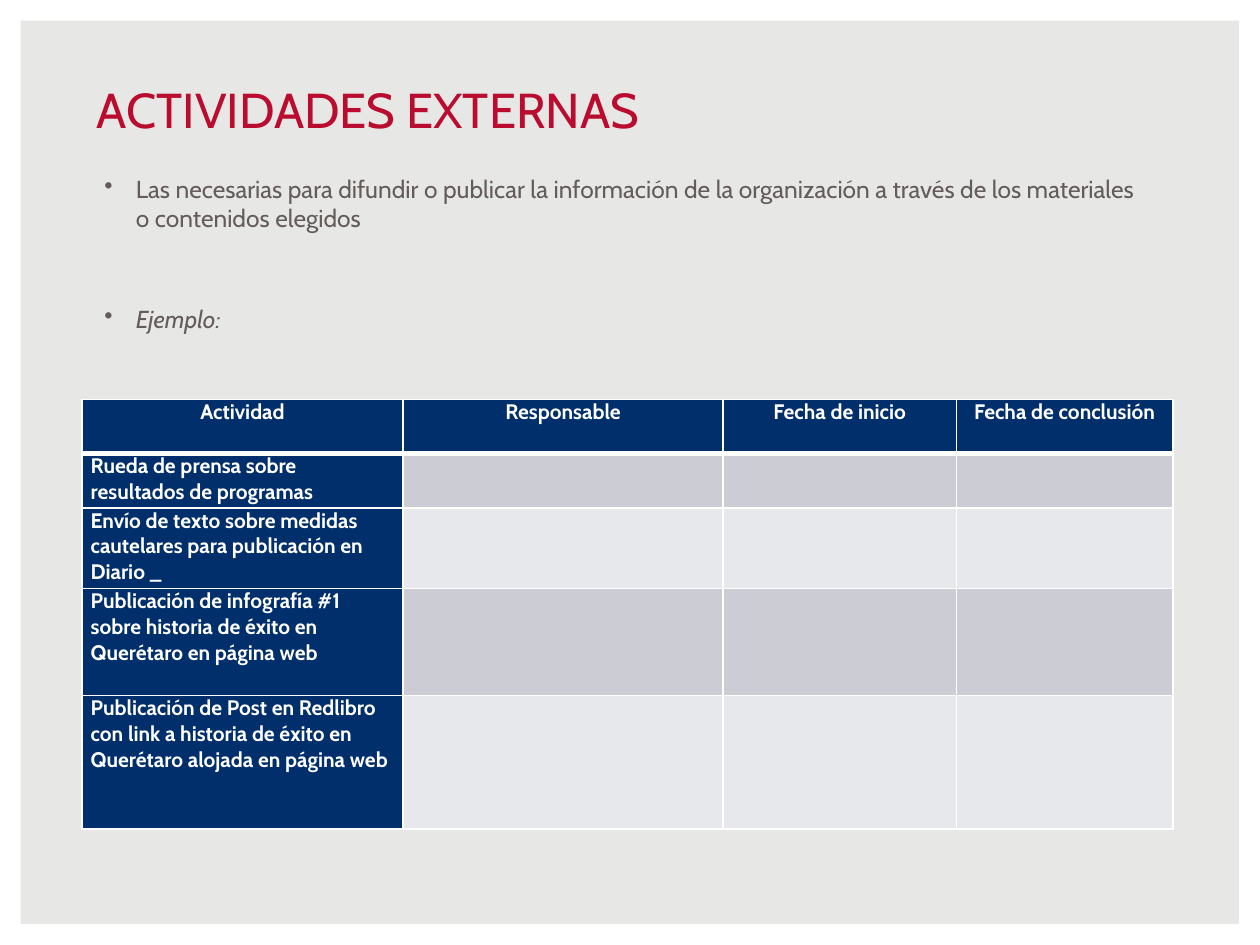
import pptx
import pptx.dml.color
import pptx.enum.shapes
import pptx.enum.text
import pptx.oxml
import pptx.oxml.ns
import pptx.util

RGBColor = pptx.dml.color.RGBColor
Inches = pptx.util.Inches
Pt = pptx.util.Pt

PAPER = RGBColor(0xE7, 0xE7, 0xE5)
WHITE = RGBColor(0xFF, 0xFF, 0xFF)
RED = RGBColor(0xBA, 0x0C, 0x2F)
GREY = RGBColor(0x63, 0x5C, 0x5B)
NAVY = RGBColor(0x00, 0x2F, 0x6C)
BANDS = (RGBColor(0xCC, 0xCD, 0xD4), RGBColor(0xE7, 0xE8, 0xEB))

FONT = "Cabin"
WIDTH, HEIGHT = 10, 7.5
COLUMNS = (2.55, 2.54, 1.85, 1.72)
ROWS = (0.43, 0.43, 0.64, 0.85, 1.06)
HEADINGS = ("Actividad", "Responsable", "Fecha de inicio", "Fecha de conclusión")
ACTIVITIES = (
    "Rueda de prensa sobre resultados de programas",
    "Envío de texto sobre medidas cautelares para publicación en Diario _",
    "Publicación de infografía #1 sobre historia de éxito en Querétaro en página web",
    "Publicación de Post en Redlibro con link a historia de éxito en Querétaro "
    "alojada en página web",
)


def add_span(para, text, size, color, bold=False, italic=False):
    span = para.add_run()
    span.text = text
    font = span.font
    font.name, font.size, font.bold, font.italic = FONT, Pt(size), bold, italic
    font.color.rgb = color


def add_frame(page):
    frame = page.shapes.add_shape(
        pptx.enum.shapes.MSO_SHAPE.FRAME, 0, 0, Inches(WIDTH), Inches(HEIGHT))
    frame.adjustments[0] = 0.022
    frame.shadow.inherit = False
    frame.fill.solid()
    frame.fill.fore_color.rgb = WHITE
    frame.line.fill.background()


def add_text_box(page, left, top, width, height, anchor):
    box = page.shapes.add_textbox(*map(Inches, (left, top, width, height)))
    box.text_frame.word_wrap = True
    box.text_frame.vertical_anchor = anchor
    return box.text_frame


def set_bullet(para):
    properties = para._p.get_or_add_pPr()
    properties.set("marL", str(Inches(0.25)))
    properties.set("indent", str(-Inches(0.25)))
    bullet = pptx.oxml.parse_xml(
        f'<a:buChar {pptx.oxml.ns.nsdecls("a")} char="•"/>')
    properties.append(bullet)


def set_borders(cell, top, bottom):
    properties = cell._tc.get_or_add_tcPr()
    for side, points in (("L", 1), ("R", 1), ("T", top), ("B", bottom)):
        properties.append(pptx.oxml.parse_xml(
            f'<a:ln{side} {pptx.oxml.ns.nsdecls("a")} w="{Pt(points)}">'
            f'<a:solidFill><a:srgbClr val="{WHITE}"/></a:solidFill></a:ln{side}>'))


def fill_label(cell, text, align):
    cell.margin_left = cell.margin_right = Inches(0.07)
    cell.margin_top = cell.margin_bottom = 0
    para = cell.text_frame.paragraphs[0]
    para.alignment = align
    add_span(para, text, 12, WHITE, bold=True)


def add_schedule(page):
    holder = page.shapes.add_table(
        len(ROWS), len(COLUMNS), Inches(0.65), Inches(3.17),
        Inches(sum(COLUMNS)), Inches(sum(ROWS)))
    table = holder.table
    for column, width in zip(table.columns, COLUMNS):
        column.width = Inches(width)
    for row, height in zip(table.rows, ROWS):
        row.height = Inches(height)

    align = pptx.enum.text.PP_ALIGN
    for r in range(len(ROWS)):
        for c in range(len(COLUMNS)):
            cell = table.cell(r, c)
            # A thick rule parts the header from the activities
            set_borders(cell, top=3 if r == 1 else 1, bottom=3 if r == 0 else 1)
            cell.fill.solid()
            is_label = r == 0 or c == 0
            cell.fill.fore_color.rgb = NAVY if is_label else BANDS[(r - 1) % 2]
            if r == 0:
                fill_label(cell, HEADINGS[c], align.CENTER)
            elif c == 0:
                fill_label(cell, ACTIVITIES[r - 1], align.LEFT)


def main():
    deck = pptx.Presentation()
    deck.slide_width, deck.slide_height = Inches(WIDTH), Inches(HEIGHT)
    page = deck.slides.add_slide(deck.slide_layouts[6])
    anchor = pptx.enum.text.MSO_ANCHOR

    # Background and frame
    page.background.fill.solid()
    page.background.fill.fore_color.rgb = PAPER
    add_frame(page)

    # Title
    title = add_text_box(page, 0.67, 0.58, 8.5, 0.57, anchor.BOTTOM)
    add_span(title.paragraphs[0], "ACTIVIDADES EXTERNAS", 28, RED)

    # Bulleted introduction
    body = add_text_box(page, 0.73, 1.33, 8.5, 1.33, anchor.TOP)
    purpose = body.paragraphs[0]
    purpose.space_after = Pt(41)
    add_span(purpose, "Las necesarias para difundir o publicar la información de la "
             "organización a través de los materiales o contenidos elegidos", 14, GREY)
    example = body.add_paragraph()
    add_span(example, "Ejemplo:", 14, GREY, italic=True)
    for para in (purpose, example):
        set_bullet(para)

    # Activity schedule
    add_schedule(page)

    deck.save("out.pptx")


if __name__ == "__main__":
    main()
